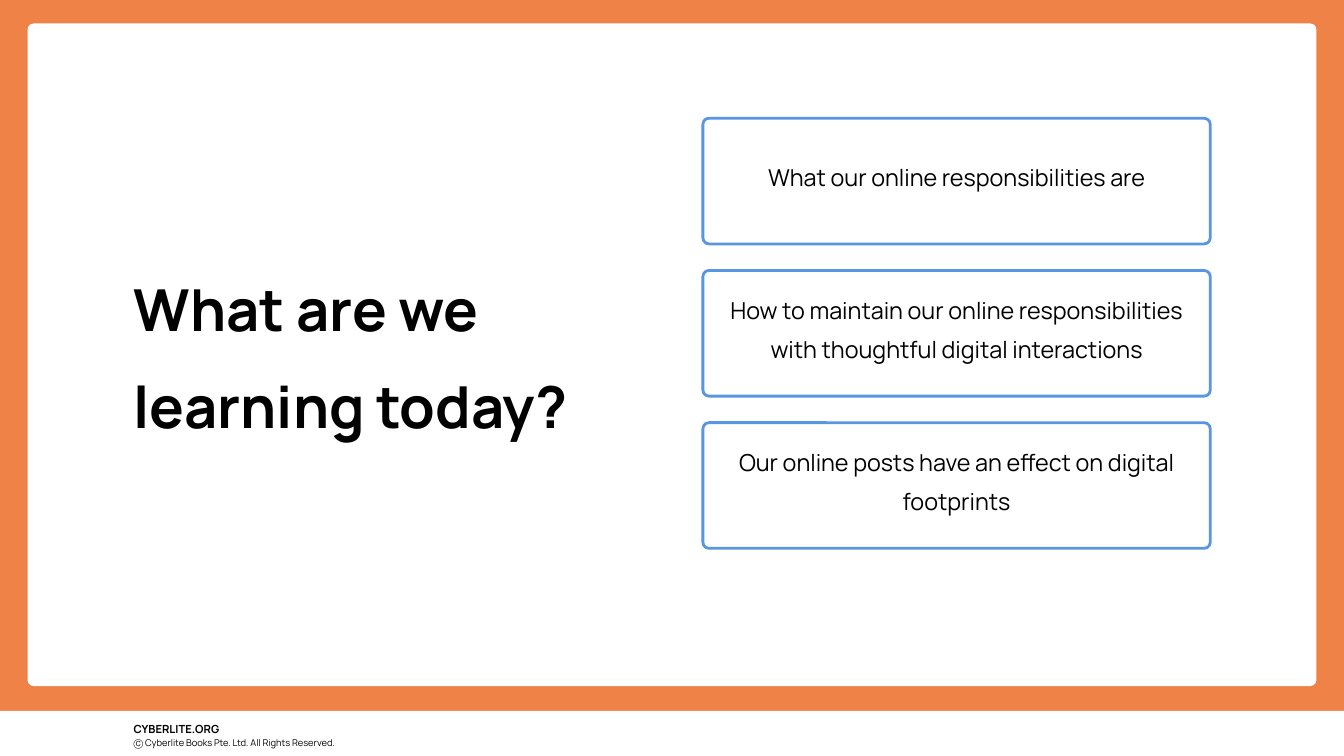
from dataclasses import dataclass

from pptx import Presentation
from pptx.dml.color import RGBColor
from pptx.enum.shapes import MSO_SHAPE
from pptx.enum.text import MSO_ANCHOR, MSO_AUTO_SIZE, PP_ALIGN
from pptx.shapes.autoshape import Shape
from pptx.slide import Slide
from pptx.util import Inches, Pt

RECTANGLE = MSO_SHAPE.RECTANGLE
ROUNDED = MSO_SHAPE.ROUNDED_RECTANGLE
TOP, MIDDLE = MSO_ANCHOR.TOP, MSO_ANCHOR.MIDDLE
LEFT, CENTER = PP_ALIGN.LEFT, PP_ALIGN.CENTER
NO_AUTOFIT = MSO_AUTO_SIZE.NONE

COLORS = {"frame": "EF8247", "paper": "FFFFFF", "outline": "5996E2", "text": "000000"}
FONT = "Manrope"
SLIDE_WIDTH, SLIDE_HEIGHT = Inches(20), Inches(11.25)
COLUMNS, ROWS = 20, 11.25
TEXT_COLUMN = 1.99
CORNER_RADIUS = 0.09
CARD_COLUMN, CARD_ROW, CARD_STEP = 10.46, 1.76, 2.265
CARD_WIDTH, CARD_HEIGHT = 7.55, 1.87
CARD_INSET, CARD_BOTTOM_INSET = 0.06, 0.33


@dataclass(frozen=True)
class Area:
    column: float
    row: float
    columns: float
    rows: float

    def place(self) -> tuple[int, int, int, int]:
        return (across(self.column), down(self.row), across(self.columns), down(self.rows))


@dataclass(frozen=True)
class Label:
    text: str
    size: int
    bold: bool = False
    alignment: PP_ALIGN = LEFT
    anchor: MSO_ANCHOR = TOP
    inset: float = 0
    bottom_inset: float = 0


CARD_TEXTS = (
    "What our online responsibilities are",
    "How to maintain our online responsibilities with thoughtful digital interactions",
    "Our online posts have an effect on digital footprints",
)
FOOTER = (
    (Area(TEXT_COLUMN, 10.67, 1.43, 0.2), Label("CYBERLITE.ORG", 12, bold=True)),
    (Area(TEXT_COLUMN, 10.9, 4.63, 0.17),
     Label("Ⓒ Cyberlite Books Pte. Ltd. All Rights Reserved.", 10)),
)


def across(columns: float) -> int:
    return round(SLIDE_WIDTH * columns / COLUMNS)


def down(rows: float) -> int:
    return round(SLIDE_HEIGHT * rows / ROWS)


def color(name: str) -> RGBColor:
    return RGBColor.from_string(COLORS[name])


def write_label(shape: Shape, label: Label) -> None:
    frame = shape.text_frame
    frame.word_wrap = True
    frame.auto_size = NO_AUTOFIT
    frame.vertical_anchor = label.anchor
    frame.margin_left = frame.margin_right = across(label.inset)
    frame.margin_top = down(label.inset)
    frame.margin_bottom = down(label.bottom_inset)
    paragraph = frame.paragraphs[0]
    paragraph.alignment = label.alignment
    paragraph.line_spacing = 1.4
    run = paragraph.add_run()
    run.text = label.text
    run.font.name = FONT
    run.font.size = Pt(label.size)
    run.font.bold = label.bold
    run.font.color.rgb = color("text")


def add_panel(slide: Slide, area: Area, kind: MSO_SHAPE) -> Shape:
    panel = slide.shapes.add_shape(kind, *area.place())
    panel.shadow.inherit = False
    panel.fill.solid()
    panel.fill.fore_color.rgb = color("paper")
    panel.line.fill.background()
    if kind == ROUNDED:
        panel.adjustments[0] = CORNER_RADIUS / area.rows
    return panel


def add_card(slide: Slide, index: int, text: str) -> None:
    area = Area(CARD_COLUMN, CARD_ROW + index * CARD_STEP, CARD_WIDTH, CARD_HEIGHT)
    card = add_panel(slide, area, ROUNDED)
    card.line.color.rgb = color("outline")
    card.line.width = Pt(3)
    write_label(card, Label(text, 25, alignment=CENTER, anchor=MIDDLE,
                            inset=CARD_INSET, bottom_inset=CARD_BOTTOM_INSET))


def add_title(slide: Slide) -> None:
    title = slide.shapes.title
    title.left, title.top, title.width, title.height = Area(TEXT_COLUMN, 3.66, 7.22, 2.41).place()
    write_label(title, Label("What are we learning today?", 62, bold=True))
    title.element.getparent().append(title.element)


def main() -> None:
    presentation = Presentation()
    presentation.slide_width, presentation.slide_height = SLIDE_WIDTH, SLIDE_HEIGHT
    slide = presentation.slides.add_slide(presentation.slide_layouts[5])
    slide.background.fill.solid()
    slide.background.fill.fore_color.rgb = color("frame")

    add_panel(slide, Area(0, 10.58, COLUMNS, 0.67), RECTANGLE)
    for area, label in FOOTER:
        write_label(slide.shapes.add_textbox(*area.place()), label)
    add_panel(slide, Area(0.41, 0.35, 19.18, 9.86), ROUNDED)
    for index, text in enumerate(CARD_TEXTS):
        add_card(slide, index, text)
    add_title(slide)
    presentation.save("out.pptx")


if __name__ == "__main__":
    main()
